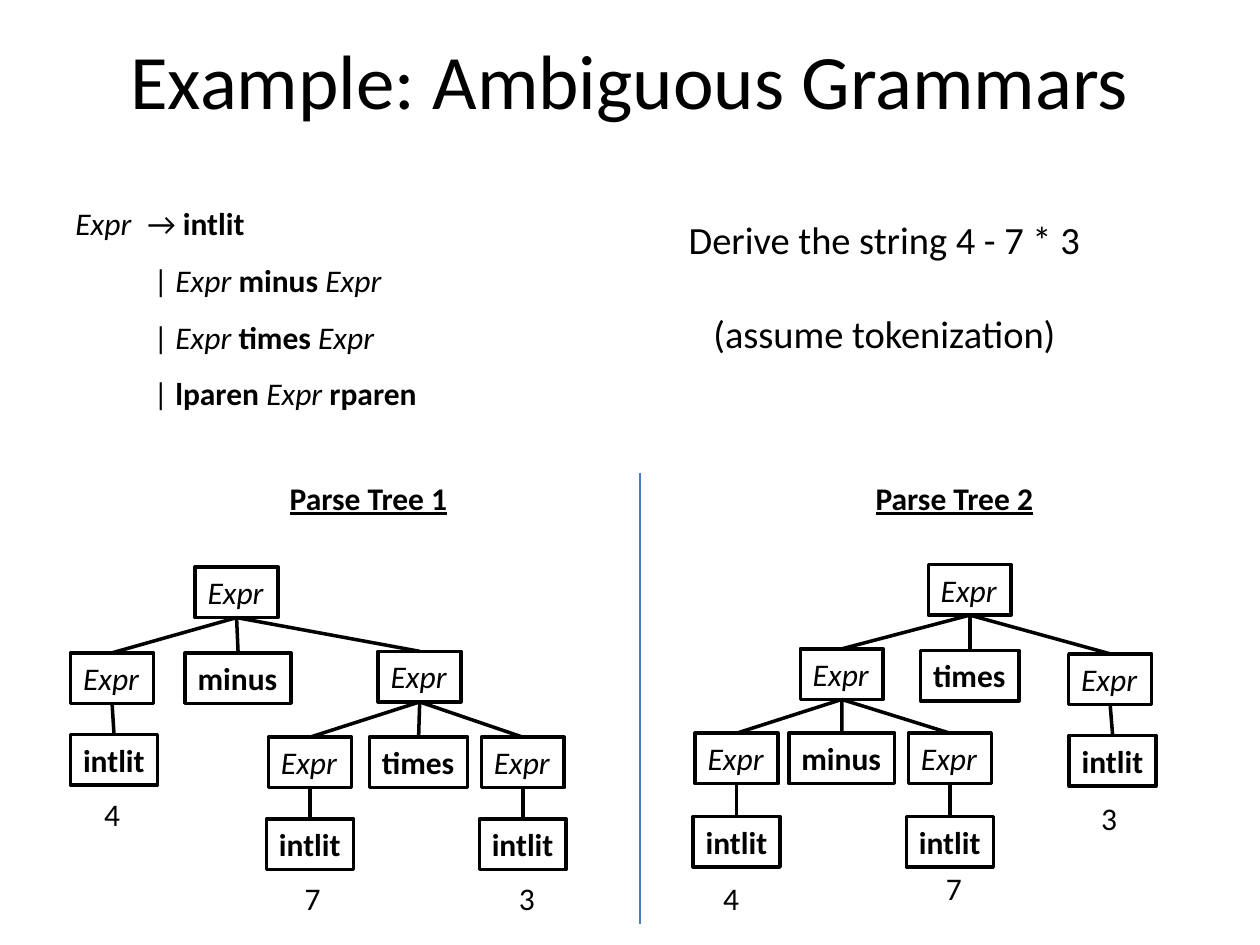
"""Build a slide showing two parse trees for one string of an ambiguous grammar."""
from dataclasses import dataclass

import pptx
import pptx.dml.color
import pptx.enum.shapes
import pptx.enum.text
import pptx.oxml
import pptx.util

Cm, Pt = pptx.util.Cm, pptx.util.Pt
RGBColor = pptx.dml.color.RGBColor
PP_ALIGN = pptx.enum.text.PP_ALIGN
MSO_ANCHOR = pptx.enum.text.MSO_ANCHOR
MSO_AUTO_SIZE = pptx.enum.text.MSO_AUTO_SIZE
MSO_SHAPE = pptx.enum.shapes.MSO_SHAPE
MSO_CONNECTOR = pptx.enum.shapes.MSO_CONNECTOR


@dataclass(frozen=True)
class Theme:
    font: str = "Calibri"
    ink: RGBColor = RGBColor(0x00, 0x00, 0x00)
    paper: RGBColor = RGBColor(0xFF, 0xFF, 0xFF)
    divider: RGBColor = RGBColor(0x4B, 0x7E, 0xBC)
    title: Pt = Pt(44)
    task: Pt = Pt(22)
    body: Pt = Pt(18)
    tree_line: Pt = Pt(2)
    divider_line: Pt = Pt(0.75)


theme = Theme()
presentation = pptx.Presentation()
presentation.slide_width, presentation.slide_height = Cm(25.4), Cm(19.05)
slide = presentation.slides.add_slide(presentation.slide_layouts[6])


def write(shape, lines, size=theme.body, align=PP_ALIGN.LEFT, wrap=False):
    frame = shape.text_frame
    frame.text = "\n".join(lines)
    frame.word_wrap = wrap
    frame.vertical_anchor = MSO_ANCHOR.TOP
    frame.auto_size = MSO_AUTO_SIZE.SHAPE_TO_FIT_TEXT
    for paragraph in frame.paragraphs:
        paragraph.alignment = align
        paragraph.font.name = theme.font
        paragraph.font.size = size
        paragraph.font.color.rgb = theme.ink
    return frame


def add_line(start, end, color, width):
    line = slide.shapes.add_connector(MSO_CONNECTOR.STRAIGHT, *start, *end)
    line.line.color.rgb = color
    line.line.width = width
    line._element.spPr.append(pptx.oxml.parse_xml(
        '<a:effectLst xmlns:a="http://schemas.openxmlformats.org/drawingml/2006/main"/>'))
    return line


title = slide.shapes.add_textbox(Cm(1.27), Cm(0), Cm(22.86), Cm(3.18))
title_frame = write(title, ["Example: Ambiguous Grammars"], theme.title, PP_ALIGN.CENTER, True)
title_frame.auto_size = MSO_AUTO_SIZE.NONE
title_frame.vertical_anchor = MSO_ANCHOR.MIDDLE

rules = [
    ["Expr", "\t→ ", "intlit"],
    ["| ", "Expr ", "minus ", "Expr"],
    ["| ", "Expr ", "times ", "Expr"],
    ["| ", "lparen ", "Expr ", "rparen"],
]
grammar = slide.shapes.add_textbox(Cm(1.27), Cm(3.61), Cm(8.26), Cm(4.88))
grammar_frame = write(grammar, [""] * len(rules), wrap=True)
for number, (paragraph, rule) in enumerate(zip(grammar_frame.paragraphs, rules)):
    paragraph.line_spacing = 1.5
    margin, indent = (Cm(1.58), Cm(0)) if number else (Cm(1.45), Cm(-1.45))
    properties = paragraph._p.get_or_add_pPr()
    properties.set("marL", str(margin))
    properties.set("indent", str(indent))
    for symbol in rule:
        run = paragraph.add_run()
        run.text = symbol
        run.font.italic = symbol.strip() == "Expr"
        run.font.bold = symbol.strip().isalpha() and not run.font.italic

task = slide.shapes.add_textbox(Cm(13.59), Cm(4.24), Cm(8.48), Cm(3.07))
task_frame = write(task, ["Derive the string 4 - 7 * 3", "(assume tokenization)"],
                   theme.task, PP_ALIGN.CENTER)
task_frame.paragraphs[1].space_before = Pt(27)

add_line((Cm(12.9), Cm(9.53)), (Cm(12.9), Cm(18.62)), theme.divider, theme.divider_line)

node_widths = {"Expr": 1.67, "minus": 2.13, "times": 1.98, "intlit": 1.75}
node_height = 1.02
digit_width = 0.84

# Each node: symbol, centre, top, index of its parent. Each digit: text, centre, top.
trees = [
    ("Parse Tree 1", 5.59,
     [("Expr", 4.77, 11.43, None),
      ("Expr", 2.26, 13.16, 0), ("minus", 4.8, 13.16, 0), ("Expr", 8.46, 13.13, 0),
      ("intlit", 2.3, 14.81, 1),
      ("Expr", 6.25, 14.86, 3), ("times", 8.44, 14.86, 3), ("Expr", 10.54, 14.86, 3),
      ("intlit", 6.25, 16.51, 5), ("intlit", 10.54, 16.51, 7)],
     [("4", 2.27, 15.9), ("7", 6.31, 17.6), ("3", 10.63, 17.6)]),
    ("Parse Tree 2", 17.4,
     [("Expr", 19.55, 11.38, None),
      ("Expr", 16.97, 13.08, 0), ("times", 19.55, 13.11, 0), ("Expr", 22.38, 13.18, 0),
      ("intlit", 22.43, 14.83, 3),
      ("Expr", 14.85, 14.78, 1), ("minus", 16.97, 14.78, 1), ("Expr", 19.15, 14.78, 1),
      ("intlit", 14.85, 16.46, 5), ("intlit", 19.15, 16.46, 7)],
     [("4", 14.75, 17.6), ("7", 19.24, 17.4), ("3", 22.37, 15.98)]),
]

for heading, heading_left, nodes, digits in trees:
    heading_box = slide.shapes.add_textbox(Cm(heading_left), Cm(9.53), Cm(3.71), Cm(node_height))
    heading_font = write(heading_box, [heading]).paragraphs[0].font
    heading_font.bold = heading_font.underline = True

    boxes = []
    for symbol, center, top, parent in nodes:
        width = node_widths[symbol]
        box = slide.shapes.add_shape(MSO_SHAPE.RECTANGLE, Cm(center - width / 2), Cm(top),
                                     Cm(width), Cm(node_height))
        box.shadow.inherit = False
        box.fill.solid()
        box.fill.fore_color.rgb = theme.paper
        box.line.color.rgb = theme.ink
        box.line.width = theme.tree_line
        node_font = write(box, [symbol]).paragraphs[0].font
        node_font.italic = symbol == "Expr"
        node_font.bold = symbol != "Expr"
        boxes.append(box)
        if parent is not None:
            branch = add_line((0, 0), (0, 0), theme.ink, theme.tree_line)
            branch.begin_connect(boxes[parent], 2)
            branch.end_connect(box, 0)

    for digit, center, top in digits:
        digit_box = slide.shapes.add_textbox(Cm(center - digit_width / 2), Cm(top),
                                             Cm(digit_width), Cm(node_height))
        write(digit_box, [digit])

presentation.save("out.pptx")
